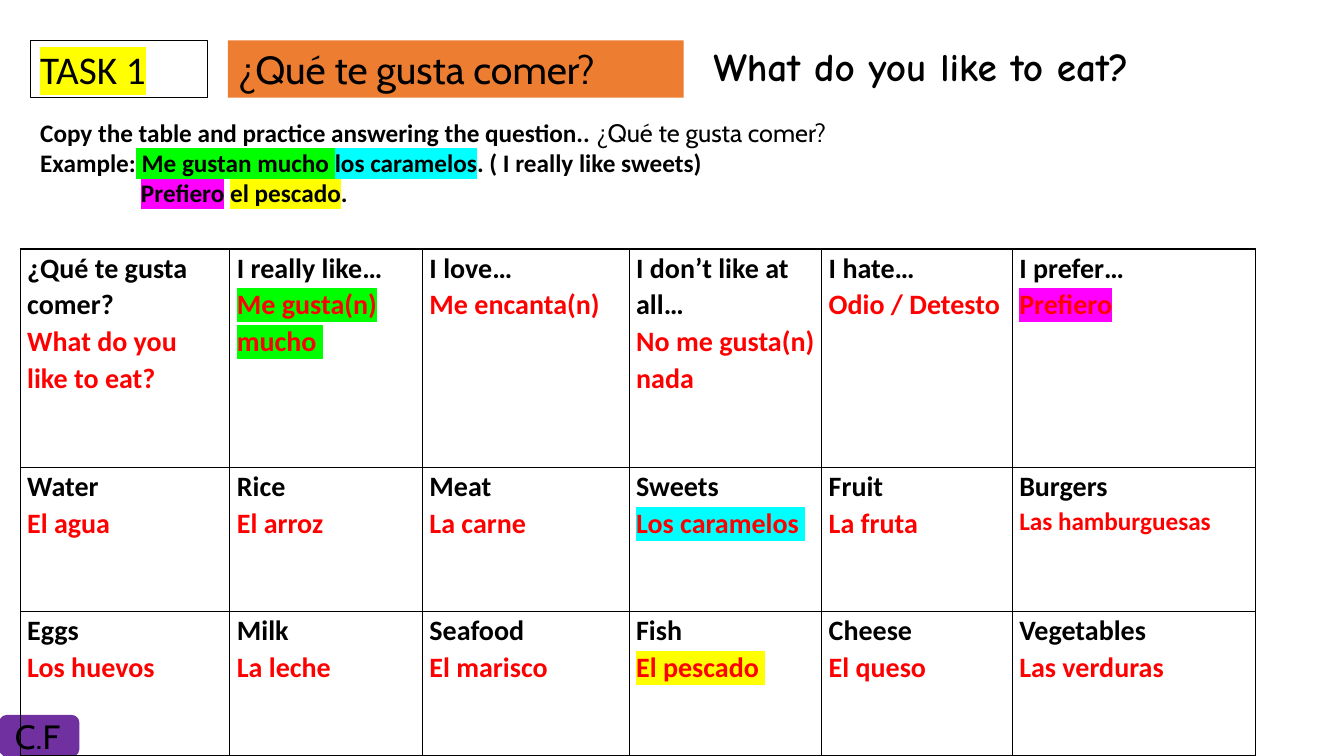
from pptx import Presentation
from pptx.dml.color import RGBColor
from pptx.enum.shapes import MSO_SHAPE as Shape
from pptx.enum.text import MSO_ANCHOR as Anchor, PP_ALIGN as Align
from pptx.oxml import parse_xml
from pptx.oxml.ns import nsdecls
from pptx.util import Pt

PX = 9144  # 100 px to the inch
COLORS = {
    "black": "000000", "white": "FFFFFF", "red": "FF0000",
    "orange": "ED7D31", "purple": "7030A0", "green": "00FF00",
    "cyan": "00FFFF", "magenta": "FF00FF", "yellow": "FFFF00",
}
COLUMN_WIDTHS = [208, 191, 205, 191, 189, 241]
ROW_HEIGHTS = [217, 143, 143]
VOCABULARY = [
    [("¿Qué te gusta comer?", "What do you like to eat?"),
     ("I really like…", "Me gusta(n) mucho "),
     ("I love…", "Me encanta(n)"),
     ("I don’t like at all…", "No me gusta(n) nada"),
     ("I hate…", "Odio / Detesto"),
     ("I prefer…", "Prefiero")],
    [("Water", "El agua"), ("Rice", "El arroz"), ("Meat", "La carne"),
     ("Sweets", "Los caramelos "), ("Fruit", "La fruta"),
     ("Burgers", "Las hamburguesas")],
    [("Eggs", "Los huevos"), ("Milk", "La leche"), ("Seafood", "El marisco"),
     ("Fish", "El pescado "), ("Cheese", "El queso"),
     ("Vegetables", "Las verduras")],
]
ANSWER_HIGHLIGHTS = {
    "Me gusta(n) mucho ": "green", "Prefiero": "magenta",
    "Los caramelos ": "cyan", "El pescado ": "yellow",
}
SMALLER_ANSWERS = {"Las hamburguesas": 18}


def rgb(name):
    return RGBColor.from_string(COLORS[name])


def scaled(box):
    return [length * PX for length in box]


def add_run(paragraph, text, size, font="Calibri", color="black", bold=False,
            highlight=None):
    run = paragraph.add_run()
    run.text = text
    run.font.size = Pt(size)
    run.font.name = font
    run.font.bold = bold
    run.font.color.rgb = rgb(color)
    if highlight:
        mark = parse_xml(f'<a:highlight {nsdecls("a")}>'
                         f'<a:srgbClr val="{COLORS[highlight]}"/></a:highlight>')
        run.font.fill._xPr.find("{*}solidFill").addnext(mark)


def add_text_box(slide, box):
    frame = slide.shapes.add_textbox(*scaled(box)).text_frame
    frame.word_wrap = True
    return frame


def add_panel(slide, box, fill, line=None, preset=Shape.RECTANGLE):
    shape = slide.shapes.add_shape(preset, *scaled(box))
    shape.shadow.inherit = False
    shape.fill.solid()
    shape.fill.fore_color.rgb = rgb(fill)
    if line:
        shape.line.color.rgb = rgb(line)
        shape.line.width = Pt(1)
    else:
        shape.line.fill.background()
    frame = shape.text_frame
    frame.word_wrap = True
    frame.paragraphs[0].alignment = Align.LEFT
    return frame


def add_question(slide, left, top, width, height):
    frame = add_panel(slide, (left, top, width, height), "orange")
    frame.vertical_anchor = Anchor.BOTTOM
    frame.paragraphs[0].line_spacing = 0.9
    add_run(frame.paragraphs[0], "¿Qué te gusta comer?", 28, "Cabin")


def add_initials(slide, left, top, width, height):
    add_panel(slide, (left, top, width, height), "purple", "purple",
              Shape.ROUNDED_RECTANGLE)
    frame = add_text_box(slide, (left + 5, top - 5, width - 10, height + 10))
    add_run(frame.paragraphs[0], "C.F:", 24, "Cabin")


def add_border(cell):
    properties = cell._tc.get_or_add_tcPr()
    for side in ("lnL", "lnR", "lnT", "lnB"):
        properties.append(parse_xml(
            f'<a:{side} {nsdecls("a")} w="{Pt(1)}"><a:solidFill>'
            f'<a:srgbClr val="{COLORS["black"]}"/></a:solidFill></a:{side}>'))


def fill_cell(cell, prompt, answer):
    cell.margin_left = cell.margin_right = 7 * PX
    cell.margin_top = cell.margin_bottom = 0
    add_border(cell)
    cell.fill.background()
    frame = cell.text_frame
    first, second = frame.paragraphs[0], frame.add_paragraph()
    first.line_spacing = second.line_spacing = 1.07
    add_run(first, prompt, 20, bold=True)
    add_run(second, answer, SMALLER_ANSWERS.get(answer, 20), color="red",
            bold=True, highlight=ANSWER_HIGHLIGHTS.get(answer))


def add_vocabulary(slide, left, top):
    box = (left, top, sum(COLUMN_WIDTHS), sum(ROW_HEIGHTS))
    table = slide.shapes.add_table(len(ROW_HEIGHTS), len(COLUMN_WIDTHS),
                                   *scaled(box)).table
    table.first_row = table.horz_banding = False
    for column, width in zip(table.columns, COLUMN_WIDTHS):
        column.width = width * PX
    for row, height, entries in zip(table.rows, ROW_HEIGHTS, VOCABULARY):
        row.height = height * PX
        for cell, (prompt, answer) in zip(row.cells, entries):
            fill_cell(cell, prompt, answer)


def add_task_label(slide, left, top, width, height):
    frame = add_panel(slide, (left, top, width, height), "white", "black")
    frame.vertical_anchor = Anchor.TOP
    add_run(frame.paragraphs[0], "TASK 1", 28, highlight="yellow")


def add_translation(slide, left, top, width, height):
    frame = add_text_box(slide, (left, top, width, height))
    add_run(frame.paragraphs[0], "What do you like to eat?", 28, "Comic Neue",
            bold=True)


def add_instructions(slide, left, top, width, height):
    frame = add_text_box(slide, (left, top, width, height))
    task = frame.paragraphs[0]
    add_run(task, "Copy the table and practice answering the question.. ", 18,
            bold=True)
    add_run(task, "¿Qué te gusta comer?", 18, "Cabin")

    # Example sentences, the second one indented
    examples = [
        [("Example:", None), (" Me gustan mucho ", "green"),
         ("los caramelos", "cyan"), (". ( I really like sweets)", None)],
        [("Prefiero", "magenta"), (" ", None), ("el pescado", "yellow"),
         (".", None)],
    ]
    for indent, parts in zip((0, 100), examples):
        paragraph = frame.add_paragraph()
        paragraph._p.get_or_add_pPr().set("marL", str(indent * PX))
        for text, highlight in parts:
            add_run(paragraph, text, 18, bold=True, highlight=highlight)


def main():
    presentation = Presentation()
    presentation.slide_width, presentation.slide_height = scaled((1333, 750))
    slide = presentation.slides.add_slide(presentation.slide_layouts[6])
    add_question(slide, 226, 40, 452, 57)
    add_initials(slide, 0, 710, 78, 40)
    add_vocabulary(slide, 20, 247)
    add_task_label(slide, 30, 40, 176, 57)
    add_translation(slide, 698, 37, 452, 57)
    add_instructions(slide, 30, 111, 1225, 101)
    presentation.save("out.pptx")


if __name__ == "__main__":
    main()
